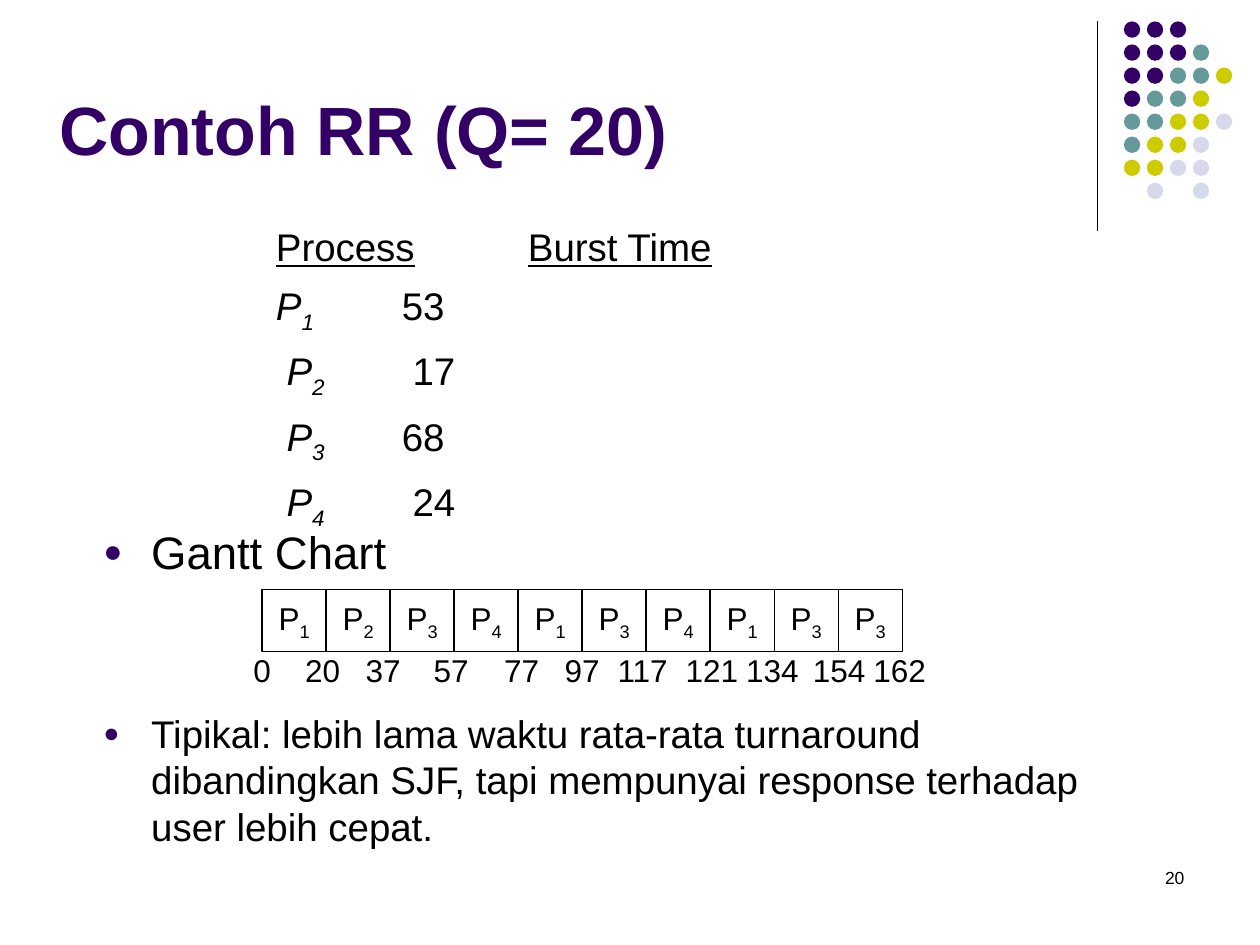
from dataclasses import dataclass

from lxml import etree
from pptx import Presentation
from pptx.dml.color import RGBColor
from pptx.enum.shapes import MSO_CONNECTOR, MSO_SHAPE
from pptx.enum.text import MSO_ANCHOR, PP_ALIGN
from pptx.oxml.ns import qn
from pptx.util import Inches, Pt

LEFT, CENTER, RIGHT = PP_ALIGN.LEFT, PP_ALIGN.CENTER, PP_ALIGN.RIGHT
TOP, MIDDLE, BOTTOM = MSO_ANCHOR.TOP, MSO_ANCHOR.MIDDLE, MSO_ANCHOR.BOTTOM
RECT, OVAL = MSO_SHAPE.RECTANGLE, MSO_SHAPE.OVAL
STRAIGHT = MSO_CONNECTOR.STRAIGHT


@dataclass(frozen=True)
class Theme:
    font: str = "Arial"
    black: RGBColor = RGBColor(0, 0, 0)
    white: RGBColor = RGBColor(255, 255, 255)
    purple: RGBColor = RGBColor(0x33, 0x00, 0x66)
    teal: RGBColor = RGBColor(0x66, 0x99, 0x99)
    olive: RGBColor = RGBColor(0xCC, 0xCC, 0x00)
    lilac: RGBColor = RGBColor(0xD8, 0xD8, 0xEC)
    title: int = 39
    heading: int = 26
    body: int = 22
    label: int = 18
    number: int = 10


theme = Theme()
prs = Presentation()
prs.slide_width, prs.slide_height = Inches(10), Inches(7.5)
s = prs.slides.add_slide(prs.slide_layouts[6])


def add_run(p, text, size, color=theme.black, sub=False):
    r = p.add_run()
    r.text = text
    r.font.name = theme.font
    r.font.size = Pt(size)
    r.font.color.rgb = color
    if sub:
        r.font._element.set("baseline", "-25000")
    return r


def add_box(x, y, w, h, align=LEFT, anchor=TOP):
    tf = s.shapes.add_textbox(Inches(x), Inches(y), Inches(w), Inches(h)).text_frame
    tf.word_wrap = True
    tf.vertical_anchor = anchor
    tf.margin_left = tf.margin_right = tf.margin_top = tf.margin_bottom = 0
    tf.paragraphs[0].alignment = align
    return tf


rule = s.shapes.add_connector(STRAIGHT, Inches(8.71), Inches(0.17), Inches(8.71), Inches(1.83))
rule.line.color.rgb = theme.black
rule.line.width = Pt(0.75)
etree.SubElement(rule._element.spPr, qn("a:effectLst"))

dot_colors = {"P": theme.purple, "T": theme.teal, "O": theme.olive, "L": theme.lilac}
dot_rows = ["PPP", "PPPT", "PPTTO", "PTTO", "TTOOL", "TOOL", "OOLL", ".L.L"]
for row, codes in enumerate(dot_rows):
    for col, code in enumerate(codes):
        if code in dot_colors:
            dot = s.shapes.add_shape(OVAL, Inches(8.92 + col * 0.73 / 4),
                                     Inches(0.17 + row * 1.28 / 7), Inches(0.13), Inches(0.13))
            dot.shadow.inherit = False
            dot.fill.solid()
            dot.fill.fore_color.rgb = dot_colors[code]
            dot.line.fill.background()

tf = add_box(0.47, 0.52, 8.61, 0.82, anchor=BOTTOM)
add_run(tf.paragraphs[0], "Contoh RR (Q= 20)", theme.title, theme.purple).font.bold = True

tf = add_box(2.19, 1.77, 5, 2.35)
p = tf.paragraphs[0]
add_run(p, "Process", theme.body).font.underline = True
add_run(p, "\t", theme.body)
add_run(p, "Burst Time", theme.body).font.underline = True
for lead, number, burst in [("", "1", "53"), (" ", "2", " 17"), (" ", "3", "68"), (" ", "4", " 24")]:
    p = tf.add_paragraph()
    add_run(p, lead + "P", theme.body).font.italic = True
    add_run(p, number, theme.body, sub=True).font.italic = True
    add_run(p, "\t" + burst, theme.body)
for p in tf.paragraphs:
    p.space_after = Pt(7.3)
    tabs = etree.SubElement(p._p.get_or_add_pPr(), qn("a:tabLst"))
    for stop in (1, 2):
        etree.SubElement(tabs, qn("a:tab"), pos=str(Inches(stop)), algn="l")

bullets = [
    (4.16, 0.45, theme.heading, None, "Gantt Chart"),
    (5.63, 1.2, theme.body, Pt(26.6),
     "Tipikal: lebih lama waktu rata-rata turnaround dibandingkan SJF, "
     "tapi mempunyai response terhadap user lebih cepat."),
]
for y, h, size, spacing, text in bullets:
    p = add_box(0.82, y, 8.18, h).paragraphs[0]
    p.line_spacing = spacing
    add_run(p, text, size)
    pPr = p._p.get_or_add_pPr()
    pPr.set("marL", str(Inches(0.38)))
    pPr.set("indent", str(Inches(-0.38)))
    color = etree.SubElement(pPr, qn("a:buClr"))
    etree.SubElement(color, qn("a:srgbClr"), val=str(theme.purple))
    etree.SubElement(pPr, qn("a:buSzPct"), val="70000")
    etree.SubElement(pPr, qn("a:buFont"), typeface=theme.font)
    etree.SubElement(pPr, qn("a:buChar"), char="●")

for i, number in enumerate("1234134133"):
    cell = s.shapes.add_shape(RECT, Inches(2.08 + i * 5.08 / 10), Inches(4.68), Inches(0.51), Inches(0.49))
    cell.shadow.inherit = False
    cell.fill.solid()
    cell.fill.fore_color.rgb = theme.white
    cell.line.color.rgb = theme.black
    cell.line.width = Pt(0.75)
    tf = cell.text_frame
    tf.word_wrap = False
    tf.vertical_anchor = MIDDLE
    p = tf.paragraphs[0]
    p.alignment = CENTER
    add_run(p, "P", theme.label)
    add_run(p, number, theme.label, sub=True)

times = {0: 2.08, 20: 2.56, 37: 3.04, 57: 3.58, 77: 4.14, 97: 4.62,
         117: 5.1, 121: 5.65, 134: 6.13, 154: 6.66, 162: 7.14}
for time, center in times.items():
    tf = add_box(center - 0.31, 5.12, 0.62, 0.4, CENTER, MIDDLE)
    add_run(tf.paragraphs[0], str(time), theme.label)

tf = add_box(7.27, 6.88, 2.13, 0.4, RIGHT)
add_run(tf.paragraphs[0], "20", theme.number)

prs.save("out.pptx")
